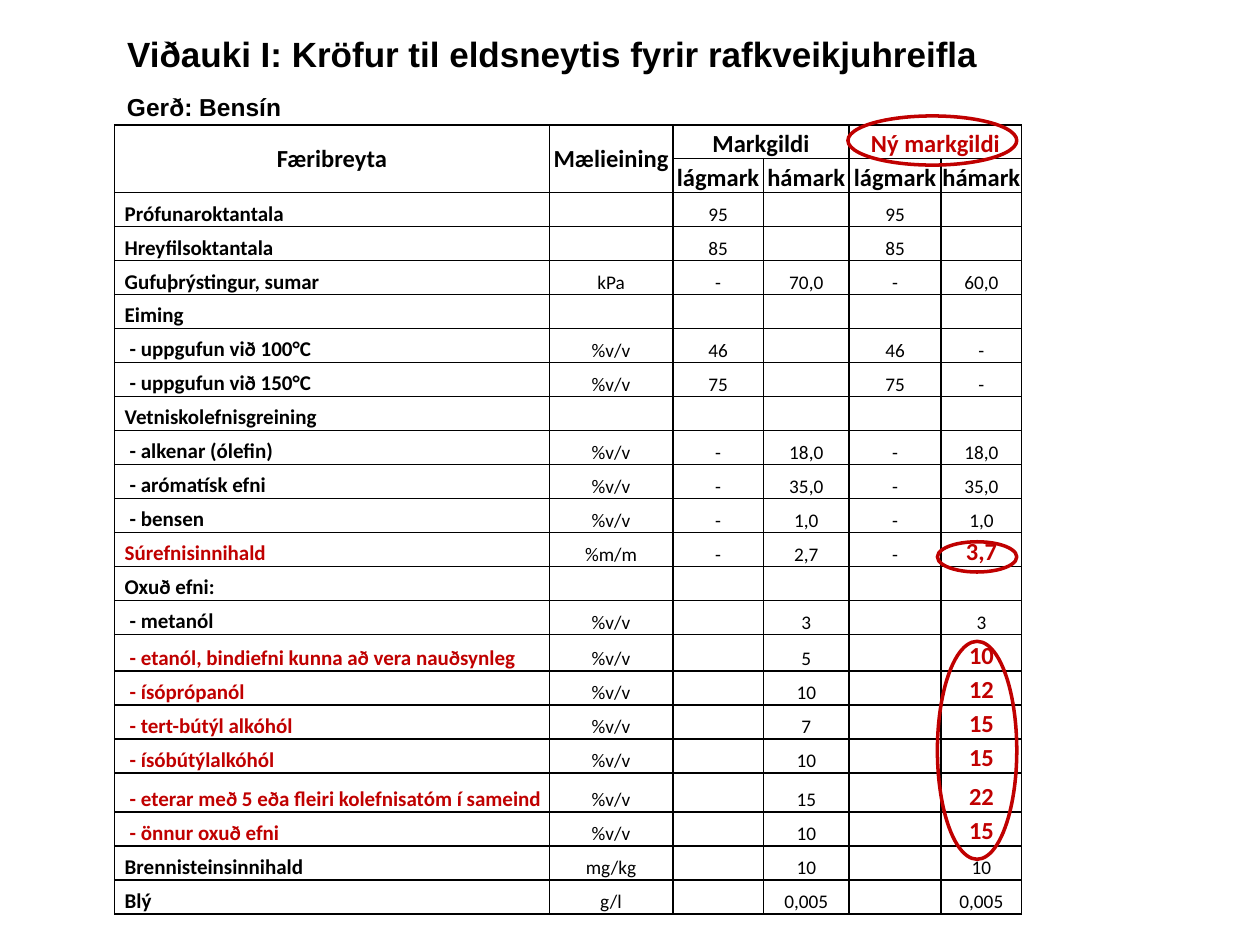
from dataclasses import dataclass

from lxml.etree import SubElement as Sub
from pptx import Presentation
from pptx.dml.color import RGBColor as Rgb
from pptx.enum.shapes import MSO_SHAPE as Shape
from pptx.enum.text import MSO_ANCHOR as Anchor, MSO_AUTO_SIZE as Fit, PP_ALIGN as Align
from pptx.oxml.ns import qn
from pptx.util import Inches, Pt


@dataclass(frozen=True)
class Theme:
    """Colours, fonts and type sizes of the slide."""
    ink: str = "000000"
    red: str = "C00000"
    head: str = "Arial"
    body: str = "Calibri"
    title: int = 20
    large: int = 14
    label: int = 12
    small: int = 11


THEME = Theme()
COLS = [3.45, 0.98, 0.72, 0.68, 0.73, 0.64]
HIGH = 0.27
TALL = {15: 0.29, 19: 0.31}
PAD = 0.01
HEADS = [
    (0, 0, 1, 0, "Færibreyta"),
    (0, 1, 1, 1, "Mælieining"),
    (0, 2, 0, 3, "Markgildi"),
    (0, 4, 0, 5, "Ný markgildi"),
    (1, 2, 1, 2, "lágmark"),
    (1, 3, 1, 3, "hámark"),
    (1, 4, 1, 4, "lágmark"),
    (1, 5, 1, 5, "hámark"),
]
# Label, unit, lower limit (old and new), old upper limit, new upper limit
FUELS = [
    ("Prófunaroktantala", "", "95", "", ""),
    ("Hreyfilsoktantala", "", "85", "", ""),
    ("Gufuþrýstingur, sumar", "kPa", "-", "70,0", "60,0"),
    ("Eiming", "", "", "", ""),
    ("- uppgufun við 100°C", "%v/v", "46", "", "-"),
    ("- uppgufun við 150°C", "%v/v", "75", "", "-"),
    ("Vetniskolefnisgreining", "", "", "", ""),
    ("- alkenar (ólefin)", "%v/v", "-", "18,0", "18,0"),
    ("- arómatísk efni", "%v/v", "-", "35,0", "35,0"),
    ("- bensen", "%v/v", "-", "1,0", "1,0"),
    ("Súrefnisinnihald", "%m/m", "-", "2,7", "3,7"),
    ("Oxuð efni:", "", "", "", ""),
    ("- metanól", "%v/v", "", "3", "3"),
    ("- etanól, bindiefni kunna að vera nauðsynleg", "%v/v", "", "5", "10"),
    ("- ísóprópanól", "%v/v", "", "10", "12"),
    ("- tert-bútýl alkóhól", "%v/v", "", "7", "15"),
    ("- ísóbútýlalkóhól", "%v/v", "", "10", "15"),
    ("- eterar með 5 eða fleiri kolefnisatóm í sameind", "%v/v", "", "15", "22"),
    ("- önnur oxuð efni", "%v/v", "", "10", "15"),
    ("Brennisteinsinnihald", "mg/kg", "", "10", "10"),
    ("Blý", "g/l", "", "0,005", "0,005"),
]
RAISED = {12, *range(15, 21)}
RINGS = [(7.44, 4.3, 0.63, 0.24), (7.44, 5.09, 0.63, 1.73), (6.73, 0.92, 1.34, 0.39)]


def style(par, face, size, bold=True, hue=THEME.ink):
    """Format every run of a paragraph."""
    for run in par.runs:
        font = run.font
        font.name, font.size, font.bold = face, Pt(size), bold
        font.color.rgb = Rgb.from_string(hue)


def add_text(slide, box, text, size, wrap):
    """Add a bold heading."""
    frame = slide.shapes.add_textbox(*map(Inches, box)).text_frame
    frame.text = text
    frame.word_wrap = wrap
    frame.auto_size = Fit.SHAPE_TO_FIT_TEXT
    style(frame.paragraphs[0], THEME.head, size)


def add_rules(cell):
    """Draw thin black borders around a cell."""
    props = cell._tc.get_or_add_tcPr()
    for side in ("lnL", "lnR", "lnT", "lnB"):
        line = Sub(props, qn(f"a:{side}"), w=str(Pt(1)))
        fill = Sub(line, qn("a:solidFill"))
        Sub(fill, qn("a:srgbClr"), val=THEME.ink)


def clear(cell):
    """Give a cell its borders, margins and small empty line."""
    add_rules(cell)
    cell.fill.background()
    cell.vertical_anchor = Anchor.BOTTOM
    cell.margin_left = cell.margin_right = cell.margin_top = Inches(PAD)
    cell.margin_bottom = 0
    par = cell.text_frame.paragraphs[0]
    Sub(par._p, qn("a:endParaRPr"), sz=str(THEME.small * 100))


def write(cell, text, size, bold=True, hue=THEME.ink, align=Align.CENTER):
    """Put formatted text in a cell."""
    par = cell.text_frame.paragraphs[0]
    par.text = text
    par.alignment = align
    style(par, THEME.body, size, bold, hue)


def fill_heads(table):
    """Write the two header rows with their merged cells."""
    for top, left, low, right, text in HEADS:
        cell = table.cell(top, left)
        if (top, left) != (low, right):
            cell.merge(table.cell(low, right))
        if low > top:
            cell.vertical_anchor = Anchor.MIDDLE
        hue = THEME.red if text.startswith("Ný") else THEME.ink
        write(cell, text, THEME.large, hue=hue)


def fill_row(table, row, fuel):
    """Write one fuel property, in red where its limit is raised."""
    label, unit, low, old, new = fuel
    hot = row in RAISED
    hue = THEME.red if hot else THEME.ink
    first = table.cell(row, 0)
    first.margin_left = Inches(0.12 if label.startswith("-") else 0.08)
    write(first, label, THEME.label, hue=hue, align=Align.LEFT)
    for col, text in enumerate((unit, low, old, low, new), 1):
        if text and hot and col == 5:
            write(table.cell(row, col), text, THEME.large, hue=hue)
        elif text:
            write(table.cell(row, col), text, THEME.small, bold=False)


def add_limits(slide):
    """Add the table of fuel limits."""
    highs = [TALL.get(row, HIGH) for row in range(len(FUELS) + 2)]
    box = map(Inches, (0.91, 0.99, sum(COLS), sum(highs)))
    table = slide.shapes.add_table(len(highs), len(COLS), *box).table
    table.first_row = table.horz_banding = False
    for col, width in zip(table.columns, COLS):
        col.width = Inches(width)
    for row, high in zip(table.rows, highs):
        row.height = Inches(high)
    for cell in table.iter_cells():
        clear(cell)
    fill_heads(table)
    for row, fuel in enumerate(FUELS, 2):
        fill_row(table, row, fuel)


def add_ring(slide, box):
    """Circle changed values in red."""
    ring = slide.shapes.add_shape(Shape.OVAL, *map(Inches, box))
    ring.shadow.inherit = False
    ring.fill.background()
    ring.line.color.rgb = Rgb.from_string(THEME.red)
    ring.line.width = Pt(2)


def main():
    """Build and save the slide."""
    deck = Presentation()
    deck.slide_width, deck.slide_height = Inches(10), Inches(7.5)
    slide = deck.slides.add_slide(deck.slide_layouts[6])
    add_text(slide, (0.91, 0.21, 7.01, 0.44),
             "Viðauki I: Kröfur til eldsneytis fyrir rafkveikjuhreifla", THEME.title, True)
    add_text(slide, (0.91, 0.68, 1.43, 0.34), "Gerð: Bensín", THEME.large, False)
    add_limits(slide)
    for box in RINGS:
        add_ring(slide, box)
    deck.save("out.pptx")


if __name__ == "__main__":
    main()
